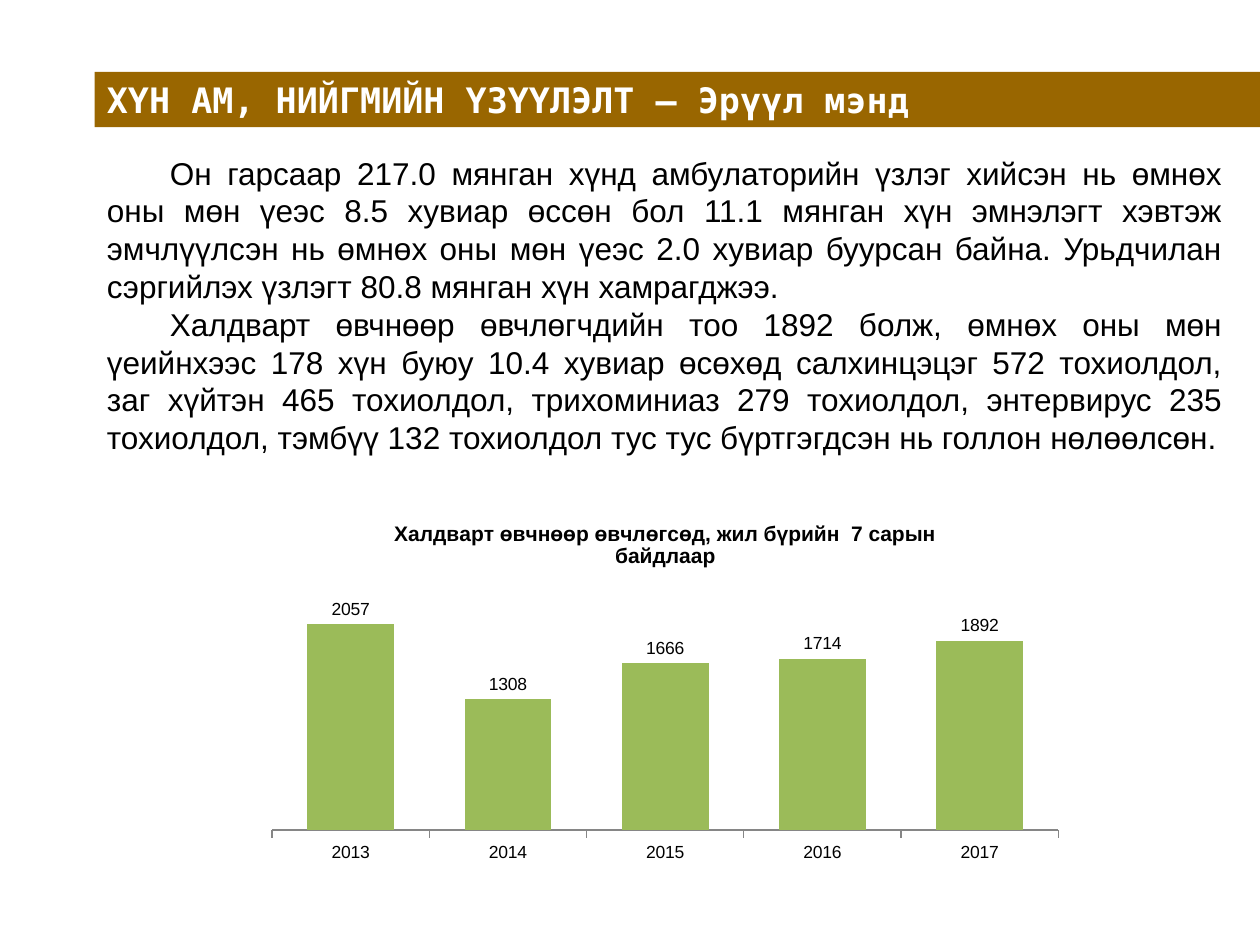
from lxml import etree
from pptx import Presentation
from pptx.chart.data import CategoryChartData
from pptx.dml.color import RGBColor
from pptx.enum.chart import XL_CHART_TYPE, XL_LABEL_POSITION, XL_TICK_LABEL_POSITION, XL_TICK_MARK
from pptx.enum.shapes import MSO_SHAPE
from pptx.enum.text import MSO_ANCHOR, PP_ALIGN
from pptx.oxml.ns import qn
from pptx.util import Inches, Pt

RECTANGLE = MSO_SHAPE.RECTANGLE
COLUMNS = XL_CHART_TYPE.COLUMN_CLUSTERED
JUSTIFY = PP_ALIGN.JUSTIFY

HEADING = "ХҮН АМ, НИЙГМИЙН ҮЗҮҮЛЭЛТ – Эрүүл мэнд"
BODY = [
    "Он гарсаар 217.0 мянган хүнд амбулаторийн үзлэг хийсэн нь өмнөх оны мөн үеэс "
    "8.5 хувиар өссөн бол 11.1 мянган хүн эмнэлэгт хэвтэж эмчлүүлсэн нь өмнөх оны "
    "мөн үеэс 2.0 хувиар буурсан байна. Урьдчилан сэргийлэх үзлэгт 80.8 мянган хүн "
    "хамрагджээ.",
    "Халдварт өвчнөөр өвчлөгчдийн тоо 1892 болж, өмнөх оны мөн үеийнхээс 178 хүн "
    "буюу 10.4 хувиар өсөхөд салхинцэцэг 572 тохиолдол, заг хүйтэн 465 тохиолдол, "
    "трихоминиаз 279 тохиолдол, энтервирус 235 тохиолдол, тэмбүү 132 тохиолдол тус "
    "тус бүртгэгдсэн нь голлон нөлөөлсөн.",
]
CHART_TITLE = "Халдварт өвчнөөр өвчлөгсөд, жил бүрийн  7 сарын байдлаар"
CASES = {"2013": 2057, "2014": 1308, "2015": 1666, "2016": 1714, "2017": 1892}

COLORS = {"band": "996600", "heading": "FFFFFF", "text": "000000",
          "bar": "9BBB59", "axis": "868686"}
WIDTH, HEIGHT = 10, 7.5
LEFT = 0.75
BAND = (LEFT, 0.57, WIDTH - LEFT, 0.44)
BODY_BOX = (LEFT, 1.17, 9.05, 2.83)
CHART_BOX = (2.03, 3.99, 6.5, 2.92)
PLOT_SHARES = {"x": 0.02, "y": 0.21, "w": 0.96, "h": 0.68}


def color(name):
    return RGBColor.from_string(COLORS[name])


def set_font(font, name, size, color_name, bold=False):
    font.name, font.size, font.bold = name, Pt(size), bold
    font.color.rgb = color(color_name)


def add_heading(slide):
    band = slide.shapes.add_shape(RECTANGLE, *map(Inches, BAND))
    band.shadow.inherit = False
    band.fill.solid()
    band.fill.fore_color.rgb = color("band")
    band.line.fill.background()
    band.text_frame.word_wrap = True
    band.text_frame.vertical_anchor = MSO_ANCHOR.MIDDLE
    paragraph = band.text_frame.paragraphs[0]
    paragraph.text = HEADING
    paragraph.alignment = JUSTIFY
    set_font(paragraph.font, "DejaVu Sans Mono", 20, "heading", bold=True)


def add_body(slide):
    frame = slide.shapes.add_textbox(*map(Inches, BODY_BOX)).text_frame
    frame.word_wrap = True
    for index, text in enumerate(BODY):
        paragraph = frame.add_paragraph() if index else frame.paragraphs[0]
        paragraph.text = "\t" + text
        paragraph.alignment = JUSTIFY
        set_font(paragraph.font, "Arial", 18, "text")


def place_plot(chart):
    """Fix the inner plot area at its shares of the chart."""
    plot_area = chart.plots[0]._element.getparent()
    for old in plot_area.findall(qn("c:layout")):
        plot_area.remove(old)
    layout = etree.Element(qn("c:layout"))
    plot_area.insert(0, layout)
    manual = etree.SubElement(layout, qn("c:manualLayout"))
    settings = {"layoutTarget": "inner", "xMode": "edge", "yMode": "edge", **PLOT_SHARES}
    for tag, value in settings.items():
        etree.SubElement(manual, qn("c:" + tag)).set("val", str(value))


def add_cases_chart(slide):
    data = CategoryChartData()
    data.categories = list(CASES)
    data.add_series("Series 1", list(CASES.values()))
    chart = slide.shapes.add_chart(COLUMNS, *map(Inches, CHART_BOX), data).chart
    set_font(chart.font, "Arial", 10, "text")
    chart.has_legend = False
    chart.has_title = True
    title = chart.chart_title.text_frame.paragraphs[0]
    title.text = CHART_TITLE
    set_font(title.font, "Arial", 12, "text", bold=True)

    plot = chart.plots[0]
    plot.gap_width = 81
    plot.vary_by_categories = False
    bars = plot.series[0].format.fill
    bars.solid()
    bars.fore_color.rgb = color("bar")
    plot.has_data_labels = True
    labels = plot.data_labels
    labels.show_value = True
    labels.position = XL_LABEL_POSITION.OUTSIDE_END
    set_font(labels.font, "Arial", 10, "text")

    years = chart.category_axis
    years.major_tick_mark = XL_TICK_MARK.OUTSIDE
    years.tick_label_position = XL_TICK_LABEL_POSITION.NEXT_TO_AXIS
    years.format.line.color.rgb = color("axis")
    set_font(years.tick_labels.font, "Arial", 10, "text")
    counts = chart.value_axis
    counts.minimum_scale, counts.maximum_scale = 0, 2500
    counts.has_major_gridlines = False
    counts.visible = False
    place_plot(chart)


def main():
    presentation = Presentation()
    presentation.slide_width, presentation.slide_height = Inches(WIDTH), Inches(HEIGHT)
    slide = presentation.slides.add_slide(presentation.slide_layouts[6])
    add_cases_chart(slide)
    add_body(slide)
    add_heading(slide)
    presentation.save("out.pptx")


if __name__ == "__main__":
    main()
